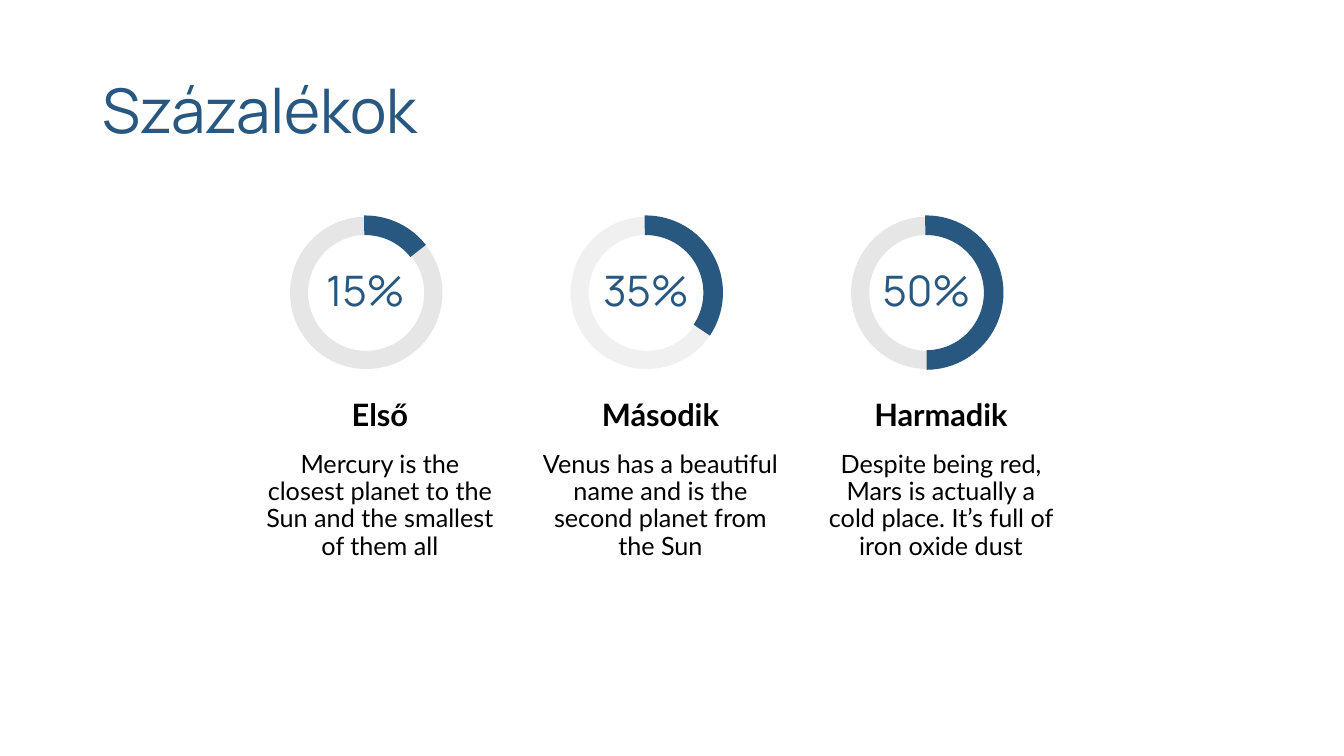
from dataclasses import dataclass

from pptx import Presentation
from pptx import util as u
from pptx.dml import color
from pptx.enum import shapes, text


@dataclass(frozen=True)
class Theme:
    """Colours, fonts and type sizes of the slide."""
    accent: str = "285780"
    ink: str = "000000"
    ring: str = "E7E6E6"
    pale_ring: str = "F0F0F0"
    display_font: str = "Manrope"
    body_font: str = "Lato"
    title_size: int = 44
    percent_size: int = 30
    heading_size: int = 22
    body_size: int = 18


THEME = Theme()
COLUMN_PITCH = 7.07
ARC_END = 270.9
DEGREE = 0.6

COLUMNS = [
    ("15%", 218.2, THEME.ring, "Első",
     "Mercury is the closest planet to the Sun and the smallest of them all"),
    ("35%", 146.2, THEME.pale_ring, "Második",
     "Venus has a beautiful name and is the second planet from the Sun"),
    ("50%", 90.2, THEME.ring, "Harmadik",
     "Despite being red, Mars is actually a cold place. It’s full of iron oxide dust"),
]


def add_text(slide, box, wording, font, size, colour, anchor=text.MSO_ANCHOR.MIDDLE,
             align=text.PP_ALIGN.CENTER, spacing=0.9, bold=False, inset=0.25):
    """Add a wrapped one-paragraph text box; box is left, top, width, height in cm."""
    frame = slide.shapes.add_textbox(*map(u.Cm, box)).text_frame
    frame.word_wrap = True
    frame.vertical_anchor = anchor
    frame.margin_left = frame.margin_right = u.Cm(0.25)
    frame.margin_top = frame.margin_bottom = u.Cm(inset)
    paragraph = frame.paragraphs[0]
    paragraph.alignment = align
    paragraph.line_spacing = spacing
    run = paragraph.add_run()
    run.text = wording
    run.font.name = font
    run.font.size = u.Pt(size)
    run.font.bold = bold
    run.font.color.rgb = color.RGBColor.from_string(colour)


def add_round(slide, kind, left, top, size, adjustments, colour):
    """Add a borderless ring or arc with the given adjustments."""
    shape = slide.shapes.add_shape(kind, *map(u.Cm, (left, top, size, size)))
    shape.shadow.inherit = False
    shape.fill.solid()
    shape.fill.fore_color.rgb = color.RGBColor.from_string(colour)
    shape.line.fill.background()
    for index, value in enumerate(adjustments):
        shape.adjustments[index] = value
    return shape


def add_gauge(slide, offset, percent, arc_start, ring_colour):
    """Add a ring, its filled arc from the top and the percentage inside."""
    add_round(slide, shapes.MSO_SHAPE.DONUT, 7.31 + offset, 5.46, 3.84,
              [0.119], ring_colour)
    arc = add_round(slide, shapes.MSO_SHAPE.BLOCK_ARC, 7.26 + offset, 5.43, 3.89,
                    [arc_start * DEGREE, ARC_END * DEGREE, 0.127], THEME.accent)
    arc._element.spPr.get_or_add_xfrm().set("flipH", "1")
    add_text(slide, (7.8 + offset, 6.81, 2.82, 1.12), percent,
             THEME.display_font, THEME.percent_size, THEME.accent)


def add_caption(slide, offset, heading, body):
    """Add the bold heading and the description below a gauge."""
    add_text(slide, (6.35 + offset, 9.75, 6.45, 1.4), heading, THEME.body_font,
             THEME.heading_size, THEME.ink, text.MSO_ANCHOR.BOTTOM, spacing=1.0, bold=True)
    add_text(slide, (6.35 + offset, 11.13, 6.45, 5.08), body, THEME.body_font,
             THEME.body_size, THEME.ink, text.MSO_ANCHOR.TOP)


def main():
    """Build the percentage slide and save it."""
    presentation = Presentation()
    presentation.slide_width = u.Cm(33.87)
    presentation.slide_height = u.Cm(19.05)
    slide = presentation.slides.add_slide(presentation.slide_layouts[6])
    add_text(slide, (2.33, 1.01, 29.21, 3.68), "Százalékok", THEME.display_font,
             THEME.title_size, THEME.accent, align=text.PP_ALIGN.LEFT, inset=0.13)
    for index, (percent, arc_start, ring_colour, heading, body) in enumerate(COLUMNS):
        offset = index * COLUMN_PITCH
        add_gauge(slide, offset, percent, arc_start, ring_colour)
        add_caption(slide, offset, heading, body)
    presentation.save("out.pptx")


if __name__ == "__main__":
    main()
